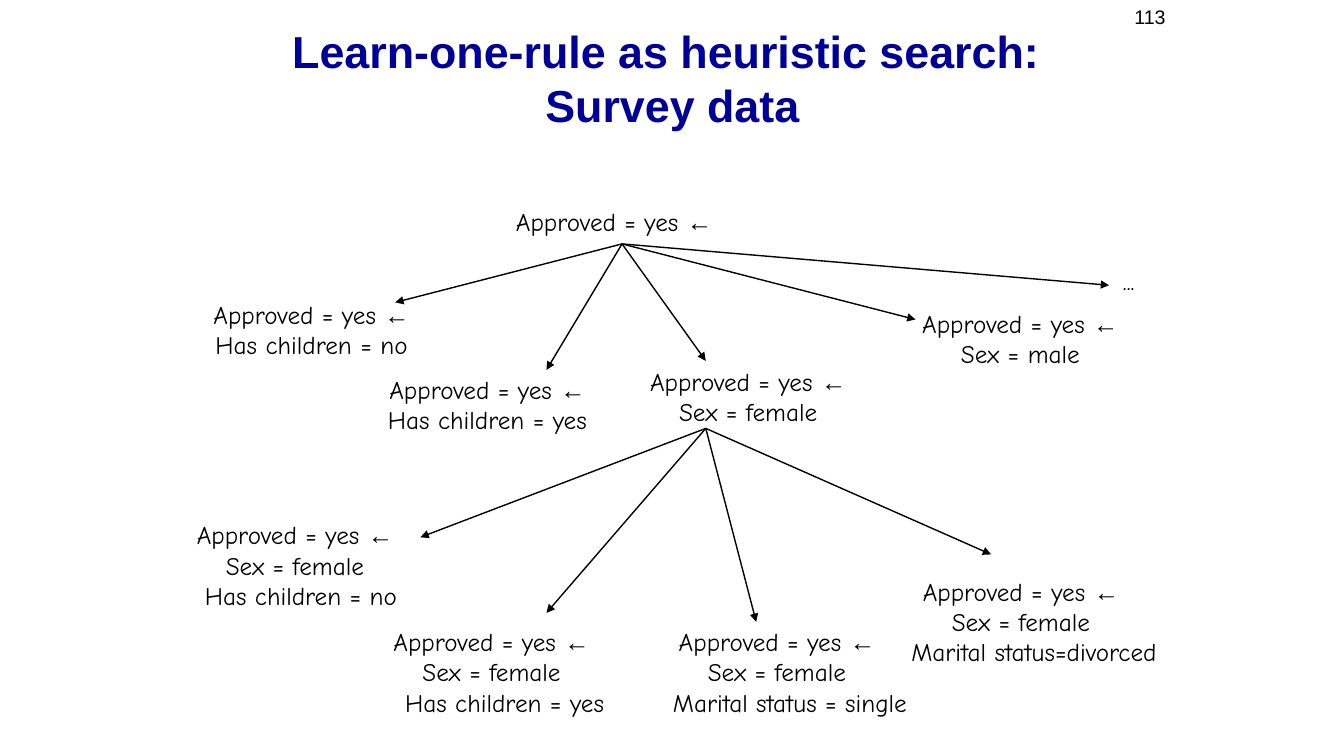
"""Draw the heuristic search tree of rules learned from survey data."""
from pptx import Presentation
from pptx.dml.color import RGBColor
from pptx.enum import shapes, text
from pptx.oxml import parse_xml
from pptx.oxml.ns import nsdecls
from pptx.util import Pt

PX = 9144
THEME = {
    "ink": RGBColor(0, 0, 0), "title": RGBColor(0, 0, 0x99),
    "sans": "Arial", "hand": "Comic Neue",
    "page": Pt(14), "head": Pt(32), "body": Pt(18), "line": Pt(1),
}
MID, CENTER = text.MSO_ANCHOR.MIDDLE, text.PP_ALIGN.CENTER

deck = Presentation()
deck.slide_width, deck.slide_height = 1333 * PX, 750 * PX
slide = deck.slides.add_slide(deck.slide_layouts[6])


def add_box(left, top, width, height, anchor=MID):
    """Add a wrapping text box and return its frame."""
    box = slide.shapes.add_textbox(*(n * PX for n in (left, top, width, height)))
    frame = box.text_frame
    frame.word_wrap = True
    frame.vertical_anchor = anchor
    return frame


def add_run(para, words, font="hand", size="body", color="ink", bold=False):
    """Add one styled run to a paragraph."""
    run = para.add_run()
    run.text = words
    run.font.name, run.font.size = THEME[font], THEME[size]
    run.font.color.rgb, run.font.bold = THEME[color], bold


page = add_box(933, 0, 233, 52, text.MSO_ANCHOR.TOP).paragraphs[0]
page.alignment = text.PP_ALIGN.RIGHT
add_run(page, "113", "sans", "page")

title = add_box(167, 31, 1000, 104, text.MSO_ANCHOR.BOTTOM).paragraphs[0]
title.alignment = CENTER
add_run(title, "Learn-one-rule as heuristic search: ", "sans", "head", "title", True)
title.add_line_break()
add_run(title, "Survey data", "sans", "head", "title", True)

rules = [
    (493, 200, 232, 40, [], 0),
    (193, 291, 232, 71, ["Has children = no"], 0),
    (366, 366, 235, 71, ["Has children = yes"], 0),
    (626, 358, 232, 71, ["Sex = female"], 0),
    (896, 300, 232, 71, ["Sex = male"], 0),
    (164, 510, 257, 101, ["Sex = female", "Has children = no"], 12),
    (359, 616, 257, 101, ["Sex = female", "Has children = yes"], 26),
    (618, 616, 305, 101, ["Sex = female", "Marital status = single"], 26),
    (850, 566, 325, 101, ["Sex = female", "Marital status=divorced"], 26),
]
for left, top, width, height, tests, indent in rules:
    frame = add_box(left, top, width, height)
    goal = frame.paragraphs[0]
    goal.alignment = CENTER
    add_run(goal, "Approved = yes ")
    add_run(goal, "←", "sans")
    for test in tests:
        para = frame.add_paragraph()
        para.alignment = CENTER
        add_run(para, test)
    if indent:
        para._p.get_or_add_pPr().set("marL", str(indent * PX))

more = add_box(1100, 258, 39, 40).paragraphs[0]
more.alignment = CENTER
add_run(more, "...")

fans = {
    (617, 242): [(392, 300), (542, 367), (700, 358), (908, 317), (1100, 283)],
    (700, 425): [(417, 533), (542, 608), (750, 617), (983, 550)],
}
for start, tips in fans.items():
    for tip in tips:
        arrow = slide.shapes.add_connector(
            shapes.MSO_CONNECTOR.STRAIGHT, *(n * PX for n in start + tip))
        arrow.line.color.rgb, arrow.line.width = THEME["ink"], THEME["line"]
        arrow.line._get_or_add_ln().append(
            parse_xml(f'<a:tailEnd {nsdecls("a")} type="triangle"/>'))
        arrow._element.spPr.append(parse_xml(f'<a:effectLst {nsdecls("a")}/>'))

deck.save("out.pptx")
